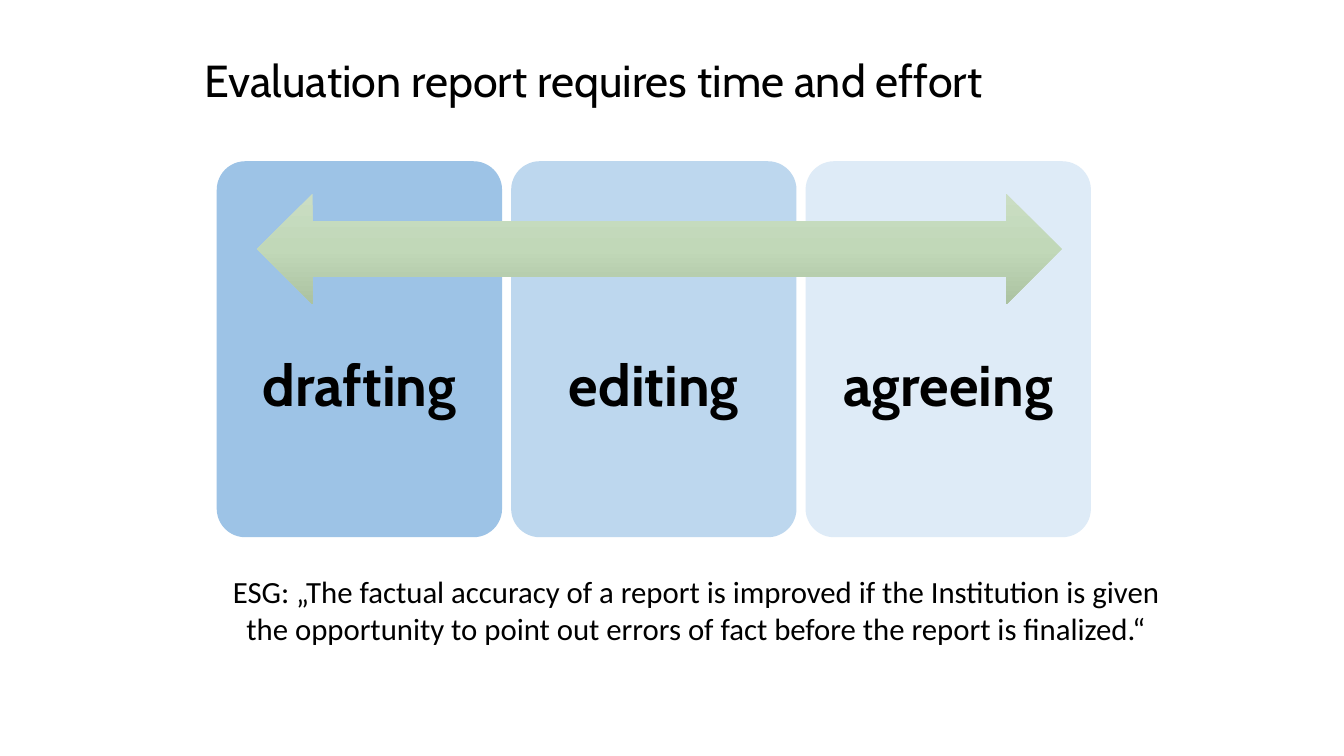
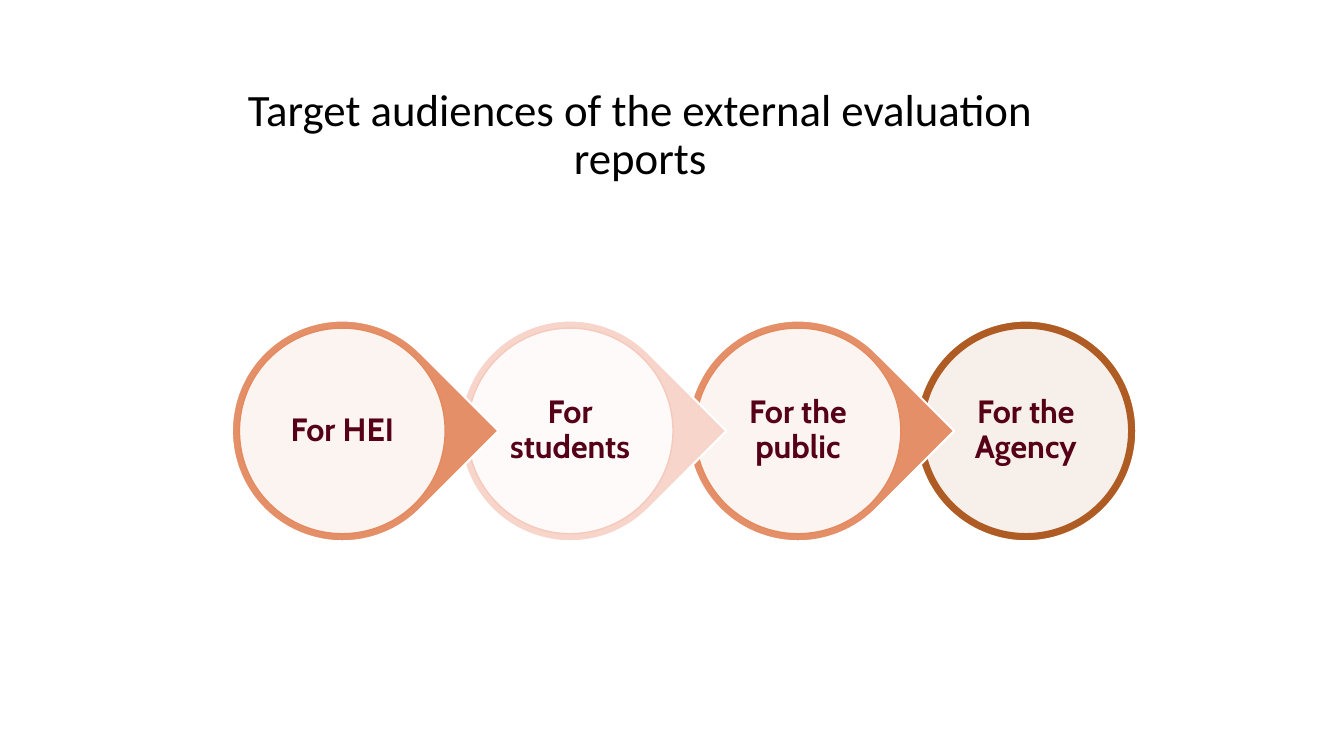
from dataclasses import dataclass

from lxml.etree import SubElement
from pptx import Presentation
from pptx.dml.color import RGBColor
from pptx.enum.shapes import MSO_SHAPE
from pptx.enum.text import MSO_ANCHOR, PP_ALIGN
from pptx.oxml.ns import qn
from pptx.util import Inches, Pt


@dataclass(frozen=True)
class Theme:
    text: str = "000000"
    label: str = "550017"
    white: str = "FFFFFF"
    arrow: tuple = ((0, "CADDC3"), (50, "C1D8B8"), (100, "ABC2A1"))
    heading_font: str = "Cabin"
    body_font: str = "Calibri"
    title_size: int = 32
    card_size: int = 41
    quote_size: int = 22
    circle_size: int = 23


THEME = Theme()

CARDS = (("drafting", "9DC3E6"), ("editing", "BDD7EE"), ("agreeing", "DEEBF7"))
AUDIENCES = (
    ("For HEI", "E48F67", "E38A5F"),
    ("For students", "F7D5CA", "F5C9BB"),
    ("For the public", "E48F67", "E38A5F"),
    ("For the Agency", "AF5C24", "AF5C24"),
)


def set_attributes(target, values):
    for name, value in values.items():
        setattr(target, name, value)


def write_text(shape, text, size, font, color=THEME.text, bold=False,
               align=PP_ALIGN.CENTER, anchor=MSO_ANCHOR.MIDDLE,
               spacing=0.9, margins=(0.1, 0.05, 0.1, 0.05)):
    frame = shape.text_frame
    left, top, right, bottom = map(Inches, margins)
    set_attributes(frame, {
        "word_wrap": True, "vertical_anchor": anchor,
        "margin_left": left, "margin_top": top,
        "margin_right": right, "margin_bottom": bottom,
    })
    paragraph = frame.paragraphs[0]
    set_attributes(paragraph, {"alignment": align, "line_spacing": spacing})
    run = paragraph.add_run()
    run.text = text
    set_attributes(run.font, {"size": Pt(size), "name": font, "bold": bold})
    run.font.color.rgb = RGBColor.from_string(color)


def add_text(slide, box, text, size, font, **formatting):
    shape = slide.shapes.add_textbox(*map(Inches, box))
    write_text(shape, text, size, font, **formatting)


def add_title(slide, box, text, font, align):
    add_text(slide, box, text, THEME.title_size, font, align=align)


def add_figure(slide, kind, box, fill, line=None, line_width=1, adjustment=None):
    shape = slide.shapes.add_shape(kind, *map(Inches, box))
    shape.shadow.inherit = False
    shape.fill.solid()
    shape.fill.fore_color.rgb = RGBColor.from_string(fill)
    if line:
        shape.line.color.rgb = RGBColor.from_string(line)
        shape.line.width = Pt(line_width)
    else:
        shape.line.fill.background()
    if adjustment is not None:
        shape.adjustments[0] = adjustment
    return shape


def set_opacity(shape, percent):
    color = shape.fill._xPr.find(qn("a:solidFill"))[0]
    SubElement(color, qn("a:alpha"), val=str(percent * 1000))


def set_vertical_gradient(shape, colors):
    shape.fill.gradient()
    gradient = shape.fill._xPr.find(qn("a:gradFill"))
    for child in list(gradient):
        gradient.remove(child)
    stops = SubElement(gradient, qn("a:gsLst"))
    for position, color in colors:
        stop = SubElement(stops, qn("a:gs"), pos=str(position * 1000))
        SubElement(stop, qn("a:srgbClr"), val=color)
    SubElement(gradient, qn("a:lin"), ang="5400000", scaled="0")


def add_card(slide, left, text, color):
    card = add_figure(slide, MSO_SHAPE.ROUNDED_RECTANGLE,
                      (left, 1.6, 2.83, 3.73), color, adjustment=0.1)
    write_text(card, text, THEME.card_size, THEME.heading_font, bold=True,
               margins=(0.1, 0.76, 0.1, 0))


def add_audience(slide, left, text, color, outline, is_last):
    top, outer, inner = 3.18, 2.19, 2.04
    inset = (outer - inner) / 2
    kind = MSO_SHAPE.OVAL if is_last else MSO_SHAPE.TEAR
    ring = add_figure(slide, kind, (left, top, outer, outer), color,
                      THEME.white, 1.5, None if is_last else 1)
    ring.rotation = 0 if is_last else 45
    disc = add_figure(slide, MSO_SHAPE.OVAL,
                      (left + inset, top + inset, inner, inner),
                      THEME.white, outline)
    set_opacity(disc, 90)
    write_text(disc, text, THEME.circle_size, THEME.heading_font,
               color=THEME.label, bold=True, margins=(0.03,) * 4)


def build_report_slide(slide):
    add_title(slide, (1.93, 0.36, 9.06, 0.93),
              "Evaluation report requires time and effort",
              THEME.heading_font, PP_ALIGN.LEFT)
    for index, (text, color) in enumerate(CARDS):
        add_card(slide, 2.15 + index * 2.92, text, color)
    arrow = add_figure(slide, MSO_SHAPE.LEFT_RIGHT_ARROW,
                       (2.55, 1.92, 7.98, 1.1), THEME.arrow[0][1])
    set_vertical_gradient(arrow, THEME.arrow)
    add_text(slide, (2.15, 5.68, 9.51, 0.74),
             "ESG: „The factual accuracy of a report is improved if the "
             "Institution is given the opportunity to point out errors of "
             "fact before the report is finalized.“",
             THEME.quote_size, THEME.body_font, anchor=MSO_ANCHOR.TOP,
             spacing=1.0, margins=(0,) * 4)


def build_audience_slide(slide):
    add_title(slide, (1.94, 0.72, 8.82, 1.26),
              "Target audiences of the external evaluation reports",
              THEME.body_font, PP_ALIGN.CENTER)
    last = len(AUDIENCES) - 1
    for index, audience in reversed(list(enumerate(AUDIENCES))):
        add_audience(slide, 2.3 + index * 2.26, *audience, index == last)


def main():
    presentation = Presentation()
    set_attributes(presentation, {"slide_width": Inches(13.33),
                                  "slide_height": Inches(7.5)})
    for build in (build_report_slide, build_audience_slide):
        build(presentation.slides.add_slide(presentation.slide_layouts[6]))
    presentation.save("out.pptx")


if __name__ == "__main__":
    main()
